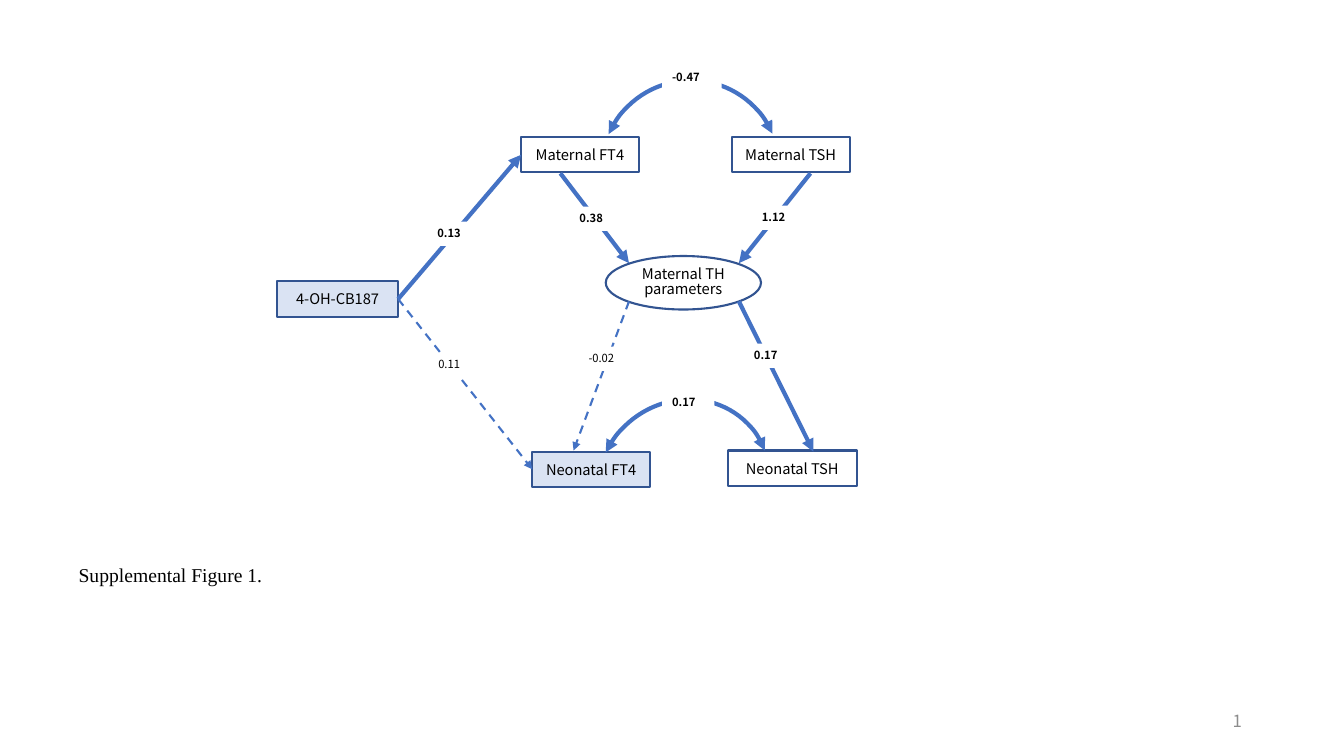
from lxml import etree
from pptx import Presentation
from pptx.dml.color import RGBColor
from pptx.enum import dml, shapes, text
from pptx.oxml import ns
from pptx.util import Pt

BLACK = RGBColor(0x00, 0x00, 0x00)
WHITE = RGBColor(0xFF, 0xFF, 0xFF)
GRAY = RGBColor(0x8C, 0x8C, 0x8C)
PALE_BLUE = RGBColor(0xDA, 0xE3, 0xF3)
ARROW_BLUE = RGBColor(0x44, 0x72, 0xC4)
OUTLINE_BLUE = RGBColor(0x32, 0x54, 0x91)
SANS = "Noto Sans CJK JP"
SERIF = "Times New Roman"
RECTANGLE = shapes.MSO_SHAPE.RECTANGLE
OVAL = shapes.MSO_SHAPE.OVAL
LEFT, CENTER, RIGHT = text.PP_ALIGN.LEFT, text.PP_ALIGN.CENTER, text.PP_ALIGN.RIGHT
TOP, MIDDLE = text.MSO_ANCHOR.TOP, text.MSO_ANCHOR.MIDDLE

presentation = Presentation()
presentation.slide_width, presentation.slide_height = Pt(960), Pt(540)
slide = presentation.slides.add_slide(presentation.slide_layouts[6])


def write(shape, words, size, align=LEFT, anchor=TOP, bold=False, color=BLACK, font=SANS):
    frame = shape.text_frame
    frame.word_wrap = True
    frame.vertical_anchor = anchor
    paragraph = frame.paragraphs[0]
    paragraph.alignment = align
    run = paragraph.add_run()
    run.text = words
    run.font.name, run.font.size, run.font.bold = font, Pt(size), bold
    run.font.color.rgb = color
    return paragraph


def style_arrow(shape, width, ends):
    shape.line.color.rgb = ARROW_BLUE
    shape.line.width = Pt(width)
    line = shape.line._get_or_add_ln()
    for end in ends:
        etree.SubElement(line, ns.qn(f"a:{end}"), type="triangle")


# Variables of the path model
nodes = {}
for name, kind, left, top, width, height, fill in [
    ("4-OH-CB187", RECTANGLE, 198, 201, 86.4, 25.2, PALE_BLUE),
    ("Maternal FT4", RECTANGLE, 372.2, 98, 84.2, 25.2, None),
    ("Maternal TSH", RECTANGLE, 522.7, 98, 84.2, 25.2, None),
    ("Neonatal FT4", RECTANGLE, 380.2, 322.6, 84.2, 25.2, PALE_BLUE),
    ("Neonatal TSH", RECTANGLE, 519.8, 321.8, 92.2, 25.2, None),
    ("Maternal TH parameters", OVAL, 432.7, 182.9, 110.9, 38.2, None),
]:
    node = slide.shapes.add_shape(kind, Pt(left), Pt(top), Pt(width), Pt(height))
    node.shadow.inherit = False
    if fill is None:
        node.fill.background()
    else:
        node.fill.solid()
        node.fill.fore_color.rgb = fill
    node.line.color.rgb = OUTLINE_BLUE
    node.line.width = Pt(1.5)
    paragraph = write(node, name, 10.5, CENTER, MIDDLE)
    if kind == OVAL:
        paragraph.line_spacing = 0.85
    nodes[name] = node

# Direct paths: solid when significant, dashed otherwise
for x1, y1, x2, y2, dashed, source, target in [
    (284.4, 213.6, 372.2, 110.6, False, "4-OH-CB187", "Maternal FT4"),
    (284.4, 213.6, 380.2, 335.2, True, "4-OH-CB187", "Neonatal FT4"),
    (400.3, 123.8, 449.3, 188, False, None, None),
    (578.9, 123.8, 527.8, 188, False, None, None),
    (449.3, 215.3, 409.7, 321.8, True, None, None),
    (527.8, 215.3, 581, 322.6, False, None, None),
]:
    arrow = slide.shapes.add_connector(
        shapes.MSO_CONNECTOR.STRAIGHT, Pt(x1), Pt(y1), Pt(x2), Pt(y2))
    if source:
        arrow.begin_connect(nodes[source], 3)
        arrow.end_connect(nodes[target], 1)
    if dashed:
        arrow.line.dash_style = dml.MSO_LINE.DASH
    style_arrow(arrow, 1.5 if dashed else 3, ["tailEnd"])
    etree.SubElement(arrow._element.spPr, ns.qn("a:effectLst"))

# Correlations between FT4 and TSH
for left, top, width, height in [(429.1, 57.6, 128.2, 127.4), (424.1, 287.3, 128.2, 120.2)]:
    arc = slide.shapes.add_shape(
        shapes.MSO_SHAPE.ARC, Pt(left), Pt(top), Pt(width), Pt(height))
    arc.adjustments[0], arc.adjustments[1] = 148.91, 12.49
    arc.rotation = 315.4
    arc.shadow.inherit = False
    arc.fill.background()
    style_arrow(arc, 3, ["headEnd", "tailEnd"])

# Coefficients, bold when significant
for value, left, top, width, bold in [
    ("0.13", 305.3, 158.4, 46.1, True),
    ("0.11", 306, 252, 46.1, False),
    ("-0.47", 473, 46.8, 42.5, True),
    ("0.38", 406.8, 147.6, 46.1, True),
    ("1.12", 537.1, 146.9, 37.4, True),
    ("-0.02", 413.3, 247.7, 37.4, False),
    ("0.17", 531.4, 245.5, 37.4, True),
    ("0.17", 473, 278.6, 37.4, True),
]:
    label = slide.shapes.add_textbox(Pt(left), Pt(top), Pt(width), Pt(17.3))
    label.fill.solid()
    label.fill.fore_color.rgb = WHITE
    write(label, value, 8, bold=bold)

# Caption and page number
caption = slide.shapes.add_textbox(Pt(49), Pt(398.2), Pt(157), Pt(24.5))
write(caption, "Supplemental Figure 1.", 14, font=SERIF)
page_number = slide.shapes.add_textbox(Pt(678.2), Pt(500.4), Pt(216), Pt(28.8))
write(page_number, "1", 12, RIGHT, MIDDLE, color=GRAY)

presentation.save("out.pptx")
